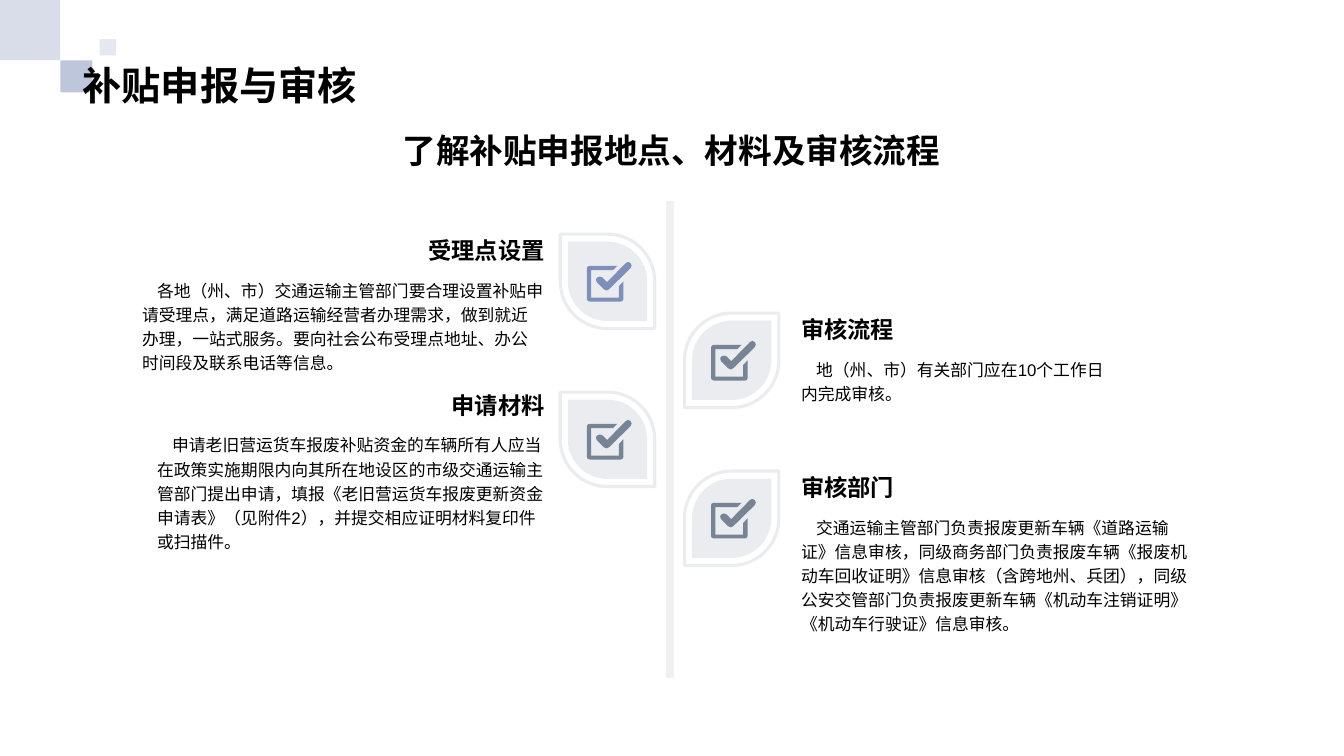
from typing import NamedTuple

from pptx import Presentation
from pptx.dml.color import RGBColor
from pptx.enum.shapes import MSO_SHAPE
from pptx.enum.text import MSO_ANCHOR, MSO_AUTO_SIZE, PP_ALIGN
from pptx.oxml.ns import qn
from pptx.util import Cm, Pt

RECT = MSO_SHAPE.RECTANGLE
LEAF = MSO_SHAPE.ROUND_2_DIAG_RECTANGLE
LEFT, CENTER, RIGHT = PP_ALIGN.LEFT, PP_ALIGN.CENTER, PP_ALIGN.RIGHT
TOP, BOTTOM = MSO_ANCHOR.TOP, MSO_ANCHOR.BOTTOM

BLUE, SLATE, BLACK = "7E8FB9", "778495", "000000"
TITLE_ONLY = 5
FIRST_ROW, ROW_STEP = 5.9, 1.99
LEFT_TEXT_END, RIGHT_TEXT_START = 13.97, 19.94
HEADING_WIDTH, HEADING_HEIGHT, BODY_OFFSET = 8.2, 0.89, 0.94
LEAF_SIZE, LEAF_CORE = 2.38, 2.0
FIRST_LINE_INDENT = 0.38

# Check mark outlines, in hundredths of a centimetre
CHECK_FRAME = [
    (0, 94), (0, 16), (2, 12), (7, 10), (77, 10), (66, 21), (11, 21), (11, 90),
    (81, 90), (81, 61), (92, 49), (92, 94), (90, 98), (86, 100), (7, 100), (2, 98),
]
CHECK_TICK = [
    (51, 51), (39, 39), (32, 37), (25, 40), (23, 45), (25, 51), (43, 69),
    (50, 72), (56, 69), (110, 16), (113, 9), (110, 3), (104, 0), (98, 3),
]


class Box(NamedTuple):
    left: float
    top: float
    width: float
    height: float


class Corner(NamedTuple):
    box: Box
    opacity: int


class Topic(NamedTuple):
    heading: str
    body: str
    body_width: float
    body_height: float
    check_color: str = SLATE
    text_shift: float = 0


CORNERS = [
    Corner(Box(0, 0, 1.52, 1.52), 30),
    Corner(Box(1.52, 1.52, 0.81, 0.81), 50),
    Corner(Box(2.51, 0.99, 0.41, 0.41), 20),
]

# Topics alternate between the left and the right of the divider
TOPICS = [
    Topic("受理点设置",
          "各地（州、市）交通运输主管部门要合理设置补贴申请受理点，满足道路运输经营者办理需求，"
          "做到就近办理，一站式服务。要向社会公布受理点地址、办公时间段及联系电话等信息。",
          10.64, 2.82, BLUE),
    Topic("审核流程", "地（州、市）有关部门应在10个工作日内完成审核。", 8.2, 2.39),
    Topic("申请材料",
          "申请老旧营运货车报废补贴资金的车辆所有人应当在政策实施期限内向其所在地设区的市级"
          "交通运输主管部门提出申请，填报《老旧营运货车报废更新资金申请表》（见附件2），"
          "并提交相应证明材料复印件或扫描件。",
          10.26, 3.15, text_shift=-0.08),
    Topic("审核部门",
          "交通运输主管部门负责报废更新车辆《道路运输证》信息审核，同级商务部门负责报废车辆"
          "《报废机动车回收证明》信息审核（含跨地州、兵团），同级公安交管部门负责报废更新车辆"
          "《机动车注销证明》《机动车行驶证》信息审核。",
          10.24, 3.76),
]


def rgb(color: str) -> RGBColor:
    return RGBColor.from_string(color)


def lengths(box: Box) -> list[Cm]:
    return [Cm(value) for value in box]


def paint(shape, fill: str | None = None, line: str | None = None,
          line_width: float = 1, opacity: int = 100) -> None:
    """Set fill, outline and one opacity (percent) for both."""
    shape.shadow.inherit = False
    if fill:
        shape.fill.solid()
        shape.fill.fore_color.rgb = rgb(fill)
    else:
        shape.fill.background()
    if line:
        shape.line.color.rgb = rgb(line)
        shape.line.width = Pt(line_width)
    else:
        shape.line.fill.background()
    if opacity < 100:
        for color in shape.element.spPr.iter(qn("a:srgbClr")):
            alpha = color.makeelement(qn("a:alpha"), {"val": str(opacity * 1000)})
            color.append(alpha)


def write(frame, text: str, size: float, bold: bool = False,
          align: PP_ALIGN = LEFT, anchor: MSO_ANCHOR = TOP):
    """Fill a text frame with one formatted paragraph and return it."""
    frame.text = text
    frame.word_wrap = True
    frame.auto_size = MSO_AUTO_SIZE.NONE
    frame.vertical_anchor = anchor
    paragraph = frame.paragraphs[0]
    paragraph.alignment = align
    font = paragraph.runs[0].font
    font.name, font.size, font.bold = "Arial", Pt(size), bold
    font.color.rgb = rgb(BLACK)
    return paragraph


def add_text(shapes, box: Box, text: str, size: float, **style):
    return write(shapes.add_textbox(*lengths(box)).text_frame, text, size, **style)


def add_leaf(shapes, left: float, top: float, size: float, rotation: int, **colors) -> None:
    leaf = shapes.add_shape(LEAF, *lengths(Box(left, top, size, size)))
    leaf.adjustments[0], leaf.adjustments[1] = 0.5, 0
    leaf.rotation = rotation
    paint(leaf, **colors)


def add_check(shapes, left: float, top: float, color: str) -> None:
    outline = shapes.build_freeform(*CHECK_FRAME[0], scale=float(Cm(0.01)))
    outline.add_line_segments(CHECK_FRAME[1:])
    outline.move_to(*CHECK_TICK[0])
    outline.add_line_segments(CHECK_TICK[1:])
    paint(outline.convert_to_shape(Cm(left), Cm(top)), fill=color)


def add_topic(shapes, row: int, topic: Topic) -> None:
    on_left = row % 2 == 0
    top = FIRST_ROW + row * ROW_STEP
    leaf_left, rotation = (14.12, 270) if on_left else (17.25, 0)
    inset = (LEAF_SIZE - LEAF_CORE) / 2
    add_leaf(shapes, leaf_left, top, LEAF_SIZE, rotation,
             line=SLATE, line_width=2.25, opacity=15)
    add_leaf(shapes, leaf_left + inset, top + inset, LEAF_CORE, rotation,
             fill=SLATE, opacity=15)
    add_check(shapes, leaf_left + 0.67, top + 0.7, topic.check_color)

    def text_left(width: float) -> float:
        return LEFT_TEXT_END - width if on_left else RIGHT_TEXT_START

    text_top = top + topic.text_shift
    add_text(shapes, Box(text_left(HEADING_WIDTH), text_top, HEADING_WIDTH, HEADING_HEIGHT),
             topic.heading, 16.6, bold=True, align=RIGHT if on_left else LEFT, anchor=BOTTOM)
    body = add_text(shapes, Box(text_left(topic.body_width), text_top + BODY_OFFSET,
                                topic.body_width, topic.body_height), topic.body, 12)
    body.line_spacing = 1.2
    body._p.get_or_add_pPr().set("indent", str(Cm(FIRST_LINE_INDENT)))


def main() -> None:
    deck = Presentation()
    deck.slide_width, deck.slide_height = Cm(33.87), Cm(19.05)
    slide = deck.slides.add_slide(deck.slide_layouts[TITLE_ONLY])
    shapes = slide.shapes

    for corner in CORNERS:
        paint(shapes.add_shape(RECT, *lengths(corner.box)), fill=BLUE, opacity=corner.opacity)

    title = shapes.title
    title.left, title.top, title.width, title.height = lengths(Box(1.83, 0.36, 30.18, 2.49))
    write(title.text_frame, "补贴申报与审核", 28, bold=True, anchor=BOTTOM)
    shapes.element.append(title.element)  # in front of the corner squares

    divider = shapes.add_shape(RECT, *lengths(Box(16.79, 5.08, 0.18, 11.99)))
    paint(divider, fill="F0F0F0", line="F2F2F2")
    for row, topic in enumerate(TOPICS):
        add_topic(shapes, row, topic)
    add_text(shapes, Box(1.83, 3.15, 30.18, 1.27), "了解补贴申报地点、材料及审核流程", 24,
             bold=True, align=CENTER)
    deck.save("out.pptx")


if __name__ == "__main__":
    main()
